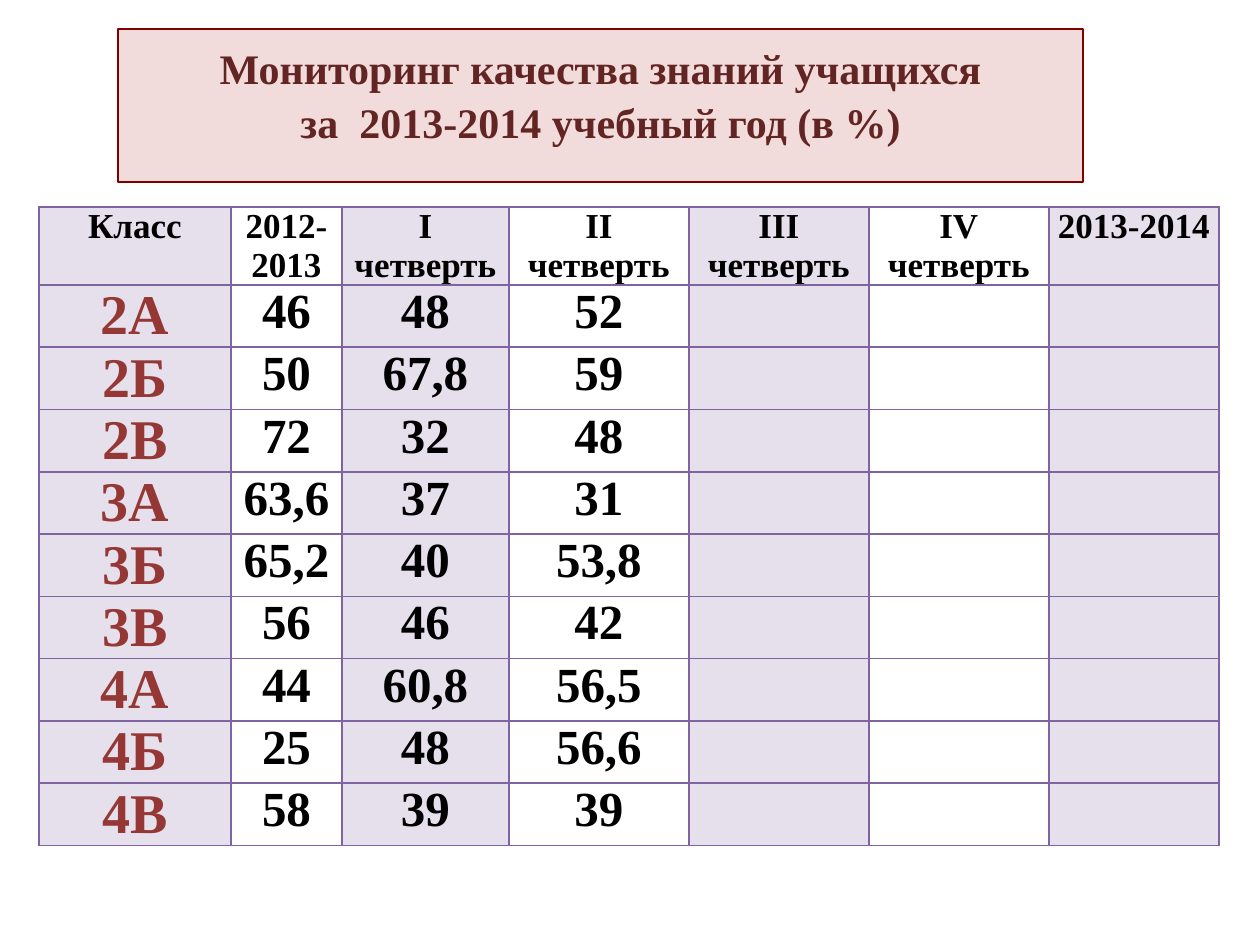
from lxml import etree
from pptx import Presentation
from pptx.dml.color import RGBColor
from pptx.enum.text import MSO_ANCHOR, MSO_AUTO_SIZE, PP_ALIGN
from pptx.oxml.ns import qn
from pptx.util import Pt

CENTER = PP_ALIGN.CENTER
TOP = MSO_ANCHOR.TOP
NO_FIT = MSO_AUTO_SIZE.NONE

SCALE = 914400 / 126  # EMU per px
FONT = "Times New Roman"
COLORS = {
    "rose": "F2DCDB",
    "wine": "800000",
    "title": "632523",
    "grade": "953735",
    "text": "000000",
    "violet": "8064A2",
}

TITLE = "Мониторинг качества знаний учащихся\nза  2013-2014 учебный год (в %)"
HEADS = ["Класс", "2012-2013", "I\nчетверть", "II\nчетверть",
         "III\nчетверть", "IV\nчетверть", "2013-2014"]
SHIFTS = {2: 28, 3: 9, 4: 28}  # numerals stand left of centre
WIDTHS = [192, 111, 167, 180, 180, 180, 170]
HEAD_H, ROW_H = 78, 62
MARKS = [
    ("2А", "46", "48", "52"),
    ("2Б", "50", "67,8", "59"),
    ("2В", "72", "32", "48"),
    ("3А", "63,6", "37", "31"),
    ("3Б", "65,2", "40", "53,8"),
    ("3В", "56", "46", "42"),
    ("4А", "44", "60,8", "56,5"),
    ("4Б", "25", "48", "56,6"),
    ("4В", "58", "39", "39"),
]


def px(n):
    return round(n * SCALE)


def rgb(name):
    return RGBColor.from_string(COLORS[name])


def add_line(parent, tag, place, color, width):
    """Put a solid line element into text or cell properties."""
    line = etree.Element(qn(tag), w=str(Pt(width)))
    fill = etree.SubElement(line, qn("a:solidFill"))
    etree.SubElement(fill, qn("a:srgbClr"), val=COLORS[color])
    parent.insert(place, line)


def style_text(frame, size, color, outline=False):
    for para in frame.paragraphs:
        para.alignment = CENTER
        for run in para.runs:
            font = run.font
            font.name, font.size, font.bold = FONT, Pt(size), True
            font.color.rgb = rgb(color)
            if outline:
                add_line(run._r.get_or_add_rPr(), "a:ln", 0, "wine", 0.75)


def style_cell(cell, tinted, inset):
    cell.margin_left = cell.margin_right = px(inset)
    cell.margin_top = cell.margin_bottom = 0
    cell.vertical_anchor = TOP
    props = cell._tc.get_or_add_tcPr()
    if tinted:
        cell.fill.solid()
        cell.fill.fore_color.rgb = rgb("violet")
        tone = props.find(".//" + qn("a:srgbClr"))
        etree.SubElement(tone, qn("a:alpha"), val="20000")
    else:
        cell.fill.background()
    for place, side in enumerate("LRTB"):
        add_line(props, "a:ln" + side, place, "violet", 1)


def add_title(slide):
    title = slide.shapes.title
    title.left, title.top = px(118), px(29)
    title.width, title.height = px(965), px(153)
    title.fill.solid()
    title.fill.fore_color.rgb = rgb("rose")
    title.line.color.rgb = rgb("wine")
    title.line.width = Pt(0.75)
    frame = title.text_frame
    frame.text = TITLE
    frame.auto_size = NO_FIT
    frame.vertical_anchor = TOP
    frame.margin_top = px(10)
    style_text(frame, 24, "title")
    for para in frame.paragraphs:
        para.line_spacing = 1.07


def add_marks(slide):
    rows = len(MARKS) + 1
    height = HEAD_H + ROW_H * len(MARKS)
    table = slide.shapes.add_table(rows, len(HEADS), px(39), px(207),
                                   px(sum(WIDTHS)), px(height)).table
    table.first_row = table.horz_banding = False
    for col, width in zip(table.columns, WIDTHS):
        col.width = px(width)
    for r, values in enumerate([HEADS, *MARKS]):
        table.rows[r].height = px(ROW_H if r else HEAD_H)
        for c in range(len(HEADS)):
            cell = table.cell(r, c)
            label = r == 0 or c == 0
            style_cell(cell, c % 2 == 0, 5 if label else 9)
            if c >= len(values):
                continue
            frame = cell.text_frame
            frame.text = values[c]
            if r == 0:
                style_text(frame, 20, "text", True)
            elif c == 0:
                style_text(frame, 32, "grade", True)
            else:
                style_text(frame, 28, "text")
    # Numerals in the header
    for c, shift in SHIFTS.items():
        para = table.cell(0, c).text_frame.paragraphs[0]
        para._p.get_or_add_pPr().set("indent", str(-px(shift)))


def main():
    deck = Presentation()
    deck.slide_width, deck.slide_height = px(1260), px(945)
    slide = deck.slides.add_slide(deck.slide_layouts[5])
    add_marks(slide)
    add_title(slide)
    deck.save("out.pptx")


if __name__ == "__main__":
    main()
